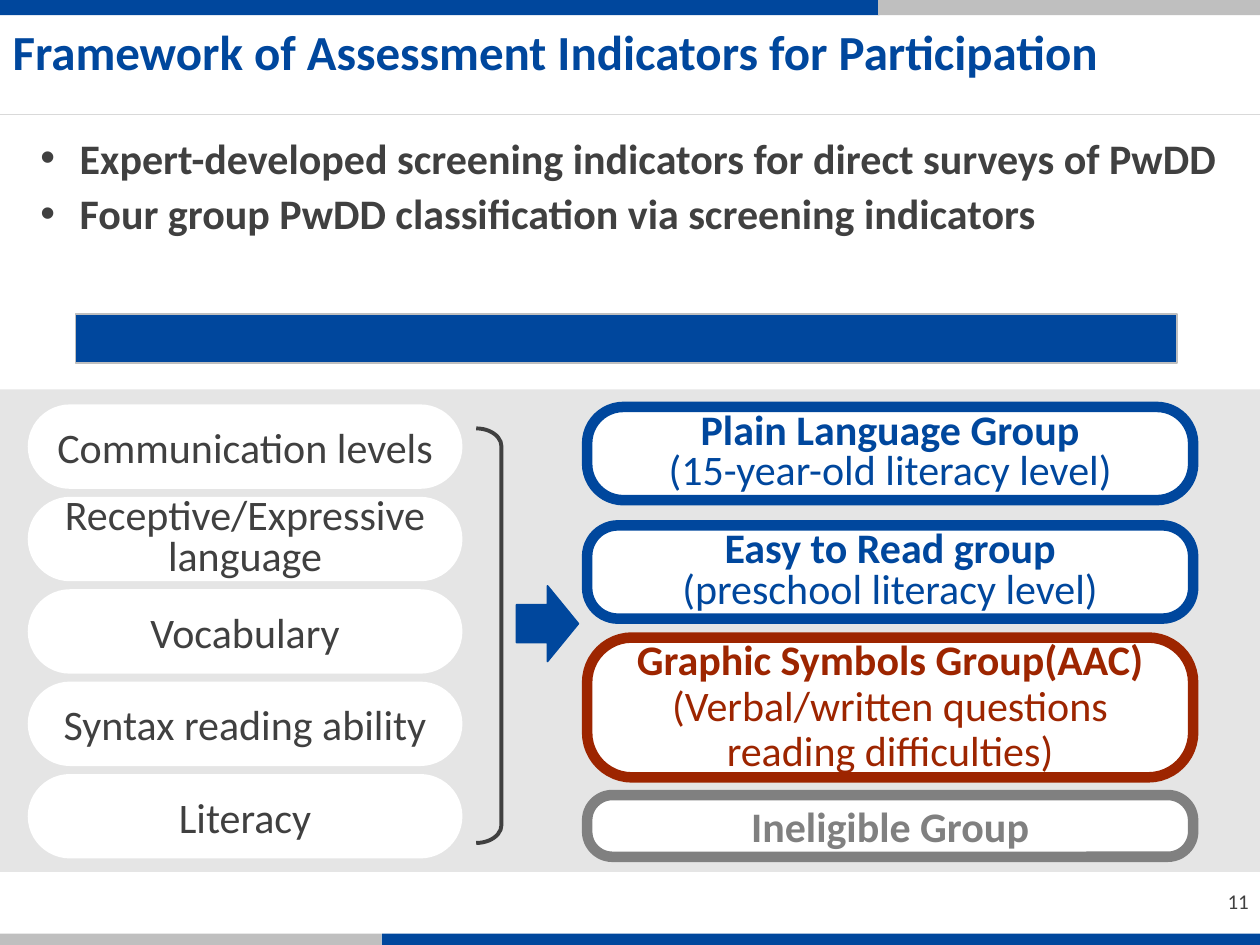
from lxml import etree
from pptx import Presentation
from pptx.dml.color import RGBColor
from pptx.enum.shapes import MSO_CONNECTOR, MSO_SHAPE
from pptx.enum.text import MSO_ANCHOR, MSO_AUTO_SIZE, PP_ALIGN
from pptx.oxml.ns import qn
from pptx.util import Pt

RECT, ROUNDED = MSO_SHAPE.RECTANGLE, MSO_SHAPE.ROUNDED_RECTANGLE
BRACKET, ARROW = MSO_SHAPE.RIGHT_BRACKET, MSO_SHAPE.RIGHT_ARROW
STRAIGHT = MSO_CONNECTOR.STRAIGHT
LEFT, CENTER, RIGHT = PP_ALIGN.LEFT, PP_ALIGN.CENTER, PP_ALIGN.RIGHT
TOP, MIDDLE = MSO_ANCHOR.TOP, MSO_ANCHOR.MIDDLE
NO_AUTOFIT = MSO_AUTO_SIZE.NONE

BLUE = RGBColor(0x00, 0x47, 0x9D)
RED = RGBColor(0x9D, 0x25, 0x00)
DARK = RGBColor(0x40, 0x40, 0x40)
GRAY = RGBColor(0x80, 0x80, 0x80)
SILVER = RGBColor(0xBF, 0xBF, 0xBF)
PALE = RGBColor(0xD9, 0xD9, 0xD9)
BLACK = RGBColor(0x00, 0x00, 0x00)
WHITE = RGBColor(0xFF, 0xFF, 0xFF)
FONT = "Calibri"

TITLE = "Framework of Assessment Indicators for Participation"
BULLETS = [
    "Expert-developed screening indicators for direct surveys of PwDD",
    "Four group PwDD classification via screening indicators",
]
BARS = [  # left, top, width, colour
    (-0.72, -0.72, 503.28, BLUE),
    (501.84, -0.72, 218.16, SILVER),
    (0, 533.52, 218.16, SILVER),
    (218.16, 533.52, 503.28, BLUE),
]
INDICATORS = [
    ["Communication levels"],
    ["Receptive/Expressive", "language"],
    ["Vocabulary"],
    ["Syntax reading ability"],
    ["Literacy"],
]
GROUPS = [  # top, height, corner, colour, line spacing, lines
    (232.56, 53.28, 0.39, BLUE, 0.8,
     ["Plain Language Group", "(15-year-old literacy level)"]),
    (300.24, 53.28, 0.33, BLUE, 0.8,
     ["Easy to Read group", "(preschool literacy level)"]),
    (364.32, 79.92, 0.32, RED, 0.9,
     ["Graphic Symbols Group(AAC)",
      "(Verbal/written questions reading difficulties)"]),
    (454.32, 35.28, 0.41, GRAY, 1.0, ["Ineligible Group"]),
]


def place(s, left, top, width, height):
    s.left, s.top, s.width, s.height = map(Pt, (left, top, width, height))


def write(tf, lines, color, size=24, align=CENTER, anchor=MIDDLE,
          spacing=1.0, bold=(False, False)):
    """Write one paragraph per line; bold holds a flag for each line."""
    tf.word_wrap = True
    tf.auto_size = NO_AUTOFIT
    tf.vertical_anchor = anchor
    for i, (line, is_bold) in enumerate(zip(lines, bold)):
        p = tf.add_paragraph() if i else tf.paragraphs[0]
        p.alignment = align
        p.line_spacing = spacing
        p.space_before = Pt(0)
        r = p.add_run()
        r.text = line
        r.font.name = FONT
        r.font.size = Pt(size)
        r.font.bold = is_bold
        r.font.color.rgb = color


def add_shape(slide, kind, box, fill=None, line=None, weight=1, corner=None):
    s = slide.shapes.add_shape(kind, *map(Pt, box))
    s.shadow.inherit = False
    if fill is None:
        s.fill.background()
    else:
        s.fill.solid()
        s.fill.fore_color.rgb = fill
    if line is None:
        s.line.fill.background()
    else:
        s.line.color.rgb = line
        s.line.width = Pt(weight)
    if corner is not None:
        s.adjustments[0] = corner
    return s


def set_opacity(s, percent):
    color = s.fill._xPr.find(qn("a:solidFill"))[0]
    etree.SubElement(color, qn("a:alpha"), val=str(percent * 1000))


def add_rule(slide, top):
    s = slide.shapes.add_connector(STRAIGHT, Pt(0), Pt(top), Pt(720), Pt(top))
    s.line.color.rgb = PALE
    s.line.width = Pt(0.5)
    etree.SubElement(s._element.spPr, qn("a:effectLst"))


def fill_title(slide):
    s = slide.shapes.title
    place(s, 0, 8.64, 720, 41.04)
    write(s.text_frame, [TITLE], BLUE, 28, LEFT, TOP, bold=[True])


def fill_bullets(slide):
    s = slide.placeholders[1]
    place(s, 15.84, 69.12, 704.16, 69.84)
    write(s.text_frame, BULLETS, DARK, align=LEFT, anchor=TOP,
          spacing=1.1, bold=(True, True))
    for p in s.text_frame.paragraphs:
        pPr = p._p.get_or_add_pPr()
        pPr.set("marL", str(Pt(22.5)))
        pPr.set("indent", str(-Pt(22.5)))
        etree.SubElement(pPr, qn("a:buFont"), typeface="Arial")
        etree.SubElement(pPr, qn("a:buChar"), char="•")


def add_page_number(slide, number):
    s = slide.shapes.add_textbox(Pt(558.72), Pt(500.4), Pt(162), Pt(28.8))
    write(s.text_frame, [number], DARK, 12, RIGHT)


def add_indicators(slide):
    top, pitch = 231.12, 52.8
    for i, lines in enumerate(INDICATORS):
        s = add_shape(slide, ROUNDED, (15.84, top + i * pitch, 248.4, 48.24),
                      WHITE, corner=0.5)
        write(s.text_frame, lines, DARK,
              spacing=0.8 if len(lines) > 1 else 1.0)


def add_groups(slide):
    for top, height, corner, color, spacing, lines in GROUPS:
        s = add_shape(slide, ROUNDED, (335.52, top, 346.32, height),
                      WHITE, color, 6, corner)
        write(s.text_frame, lines, color, spacing=spacing, bold=(True, False))


def main():
    prs = Presentation()
    prs.slide_width, prs.slide_height = Pt(720), Pt(540)
    slide = prs.slides.add_slide(prs.slide_layouts[1])

    add_page_number(slide, "11")
    for left, top, width, color in BARS:
        add_shape(slide, RECT, (left, top, width, 9.36), color)
    add_rule(slide, 65.52)
    fill_title(slide)
    fill_bullets(slide)

    add_shape(slide, RECT, (43.2, 179.28, 629.28, 28.08), BLUE, SILVER)
    band = add_shape(slide, RECT, (0, 222.48, 720, 275.76), BLACK)
    set_opacity(band, 10)
    add_indicators(slide)
    add_shape(slide, BRACKET, (272.16, 244.8, 14.4, 236.88),
              line=DARK, weight=2.25, corner=0.71)
    add_shape(slide, ARROW, (295.2, 334.8, 35.28, 43.2), BLUE, BLUE)
    add_groups(slide)

    prs.save("out.pptx")


if __name__ == "__main__":
    main()
